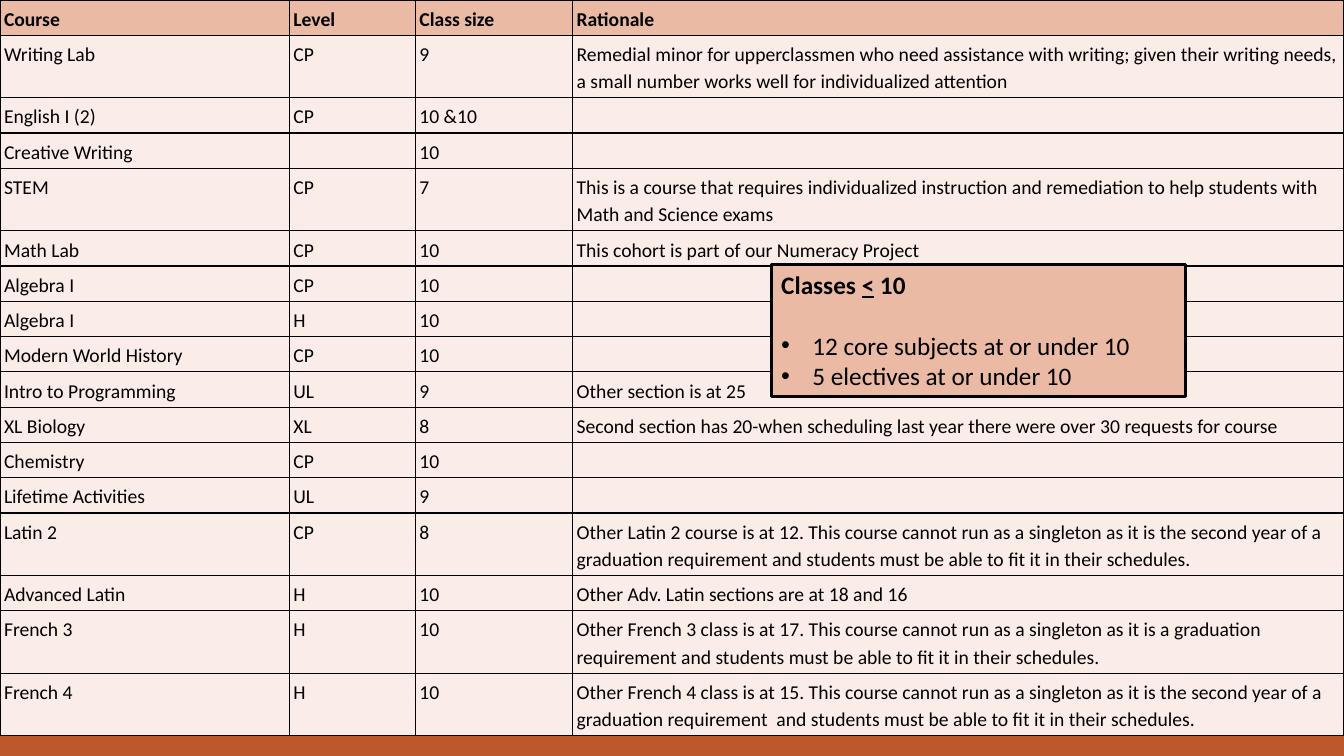
import dataclasses
import typing

import lxml.etree
import pptx
import pptx.dml.color
import pptx.enum.shapes
import pptx.enum.text
import pptx.oxml.ns
import pptx.util

Inches = pptx.util.Inches
Pt = pptx.util.Pt
RGBColor = pptx.dml.color.RGBColor
qn = pptx.oxml.ns.qn

BLACK = RGBColor(0x00, 0x00, 0x00)
PEACH = RGBColor(0xEA, 0xBA, 0xA5)
PALE_PEACH = RGBColor(0xFA, 0xED, 0xE7)
RUST = RGBColor(0xBD, 0x58, 0x2C)
ORANGE = RGBColor(0xE4, 0x83, 0x12)

COLUMN_WIDTHS = (2.87, 1.25, 1.56, 7.65)
LINE_HEIGHTS = {1: 0.35, 2: 0.62}
TABLE_SIZE = 14
CALLOUT_SIZE = 18
CELL_FORMAT = {
    "margin_left": Inches(0.04),
    "margin_right": Inches(0.04),
    "margin_top": Inches(0.04),
    "margin_bottom": Inches(0.03),
}


@dataclasses.dataclass
class Course:
    name: str
    level: str
    size: str
    rationale: str = ""
    lines: int = 1


@dataclasses.dataclass
class Block:
    left: float
    top: float
    width: float
    height: float
    fill: RGBColor
    line_width: float = 0


@dataclasses.dataclass
class Span:
    text: str
    bold: bool = False
    underline: bool = False


HEADER = Course("Course", "Level", "Class size", "Rationale")
COURSES = [
    Course("Writing Lab", "CP", "9",
           "Remedial minor for upperclassmen who need assistance with writing; given their "
           "writing needs, a small number works well for individualized attention", 2),
    Course("English I (2)", "CP", "10 &10"),
    Course("Creative Writing", "", "10"),
    Course("STEM", "CP", "7",
           "This is a course that requires individualized instruction and remediation to help "
           "students with Math and Science exams", 2),
    Course("Math Lab", "CP", "10", "This cohort is part of our Numeracy Project"),
    Course("Algebra I", "CP", "10"),
    Course("Algebra I", "H", "10"),
    Course("Modern World History", "CP", "10"),
    Course("Intro to Programming", "UL", "9", "Other section is at 25"),
    Course("XL Biology", "XL", "8",
           "Second section has 20-when scheduling last year there were over 30 requests for course"),
    Course("Chemistry", "CP", "10"),
    Course("Lifetime Activities", "UL", "9"),
    Course("Latin 2", "CP", "8",
           "Other Latin 2 course is at 12. This course cannot run as a singleton as it is the "
           "second year of a graduation requirement and students must be able to fit it in "
           "their schedules.", 2),
    Course("Advanced Latin", "H", "10", "Other Adv. Latin sections are at 18 and 16"),
    Course("French 3", "H", "10",
           "Other French 3 class is at 17. This course cannot run as a singleton as it is a "
           "graduation requirement and students must be able to fit it in their schedules.", 2),
    Course("French 4", "H", "10",
           "Other French 4 class is at 15. This course cannot run as a singleton as it is the "
           "second year of a graduation requirement  and students must be able to fit it in "
           "their schedules.", 2),
]

FOOTER_BLOCKS = [
    Block(0, 7, 13.33, 0.5, RUST),
    Block(0, 6.93, 13.33, 0.07, ORANGE),
]
CALLOUT = Block(7.65, 2.62, 4.11, 1.31, PEACH, 2.25)
CALLOUT_HEADING = [Span("Classes ", True), Span("<", True, True), Span(" 10", True)]
CALLOUT_BULLETS = ["12 core subjects at or under 10", "5 electives at or under 10"]


def apply(target: typing.Any, values: dict[str, typing.Any]) -> None:
    for name, value in values.items():
        setattr(target, name, value)


def add_span(para: typing.Any, span: Span, size: float) -> None:
    run = para.add_run()
    run.text = span.text
    apply(run.font, {"name": "Calibri", "size": Pt(size), "bold": span.bold,
                     "underline": span.underline})
    run.font.color.rgb = BLACK


def add_block(page: typing.Any, block: Block) -> typing.Any:
    box = page.shapes.add_shape(
        pptx.enum.shapes.MSO_SHAPE.RECTANGLE,
        Inches(block.left), Inches(block.top), Inches(block.width), Inches(block.height))
    box.shadow.inherit = False
    box.fill.solid()
    box.fill.fore_color.rgb = block.fill
    if block.line_width:
        box.line.width = Pt(block.line_width)
        box.line.color.rgb = BLACK
    else:
        box.line.fill.background()
    return box


def add_borders(cell: typing.Any) -> None:
    properties = cell._tc.get_or_add_tcPr()
    for side in ("a:lnL", "a:lnR", "a:lnT", "a:lnB"):
        border = lxml.etree.SubElement(properties, qn(side), w=str(Pt(1)))
        paint = lxml.etree.SubElement(border, qn("a:solidFill"))
        lxml.etree.SubElement(paint, qn("a:srgbClr"), val=str(BLACK))


def fill_cell(cell: typing.Any, text: str, header: bool) -> None:
    apply(cell, CELL_FORMAT)
    add_borders(cell)
    cell.fill.solid()
    cell.fill.fore_color.rgb = PEACH if header else PALE_PEACH
    para = cell.text_frame.paragraphs[0]
    para.line_spacing = 1.15
    if text:
        add_span(para, Span(text, header), TABLE_SIZE)
    else:
        lxml.etree.SubElement(para._p, qn("a:endParaRPr"), sz=str(TABLE_SIZE * 100))


def add_course_table(page: typing.Any) -> None:
    courses = [HEADER, *COURSES]
    heights = [LINE_HEIGHTS[course.lines] for course in courses]
    table = page.shapes.add_table(
        len(courses), len(COLUMN_WIDTHS), Inches(0), Inches(0),
        Inches(sum(COLUMN_WIDTHS)), Inches(sum(heights))).table
    table.horz_banding = False
    for column, width in zip(table.columns, COLUMN_WIDTHS):
        column.width = Inches(width)
    for row, course, height in zip(table.rows, courses, heights):
        row.height = Inches(height)
        texts = (course.name, course.level, course.size, course.rationale)
        for cell, text in zip(row.cells, texts):
            fill_cell(cell, text, course is HEADER)


def add_bullet(para: typing.Any) -> None:
    properties = para._p.get_or_add_pPr()
    properties.set("marL", str(Inches(0.31)))
    properties.set("indent", str(Inches(-0.31)))
    lxml.etree.SubElement(properties, qn("a:buFont"), typeface="Arial")
    lxml.etree.SubElement(properties, qn("a:buChar"), char="•")


def add_callout(page: typing.Any) -> None:
    frame = add_block(page, CALLOUT).text_frame
    apply(frame, {"word_wrap": True, "vertical_anchor": pptx.enum.text.MSO_ANCHOR.TOP})
    heading = frame.paragraphs[0]
    heading.alignment = pptx.enum.text.PP_ALIGN.LEFT
    for span in CALLOUT_HEADING:
        add_span(heading, span, CALLOUT_SIZE)
    for index, text in enumerate(CALLOUT_BULLETS):
        para = frame.add_paragraph()
        apply(para, {"alignment": pptx.enum.text.PP_ALIGN.LEFT,
                     "space_before": Pt(0 if index else 22)})
        add_bullet(para)
        add_span(para, Span(text), CALLOUT_SIZE)


def main() -> None:
    deck = pptx.Presentation()
    apply(deck, {"slide_width": Inches(13.33), "slide_height": Inches(7.5)})
    page = deck.slides.add_slide(deck.slide_layouts[6])
    for block in FOOTER_BLOCKS:
        add_block(page, block)
    add_course_table(page)
    add_callout(page)
    deck.save("out.pptx")


if __name__ == "__main__":
    main()
